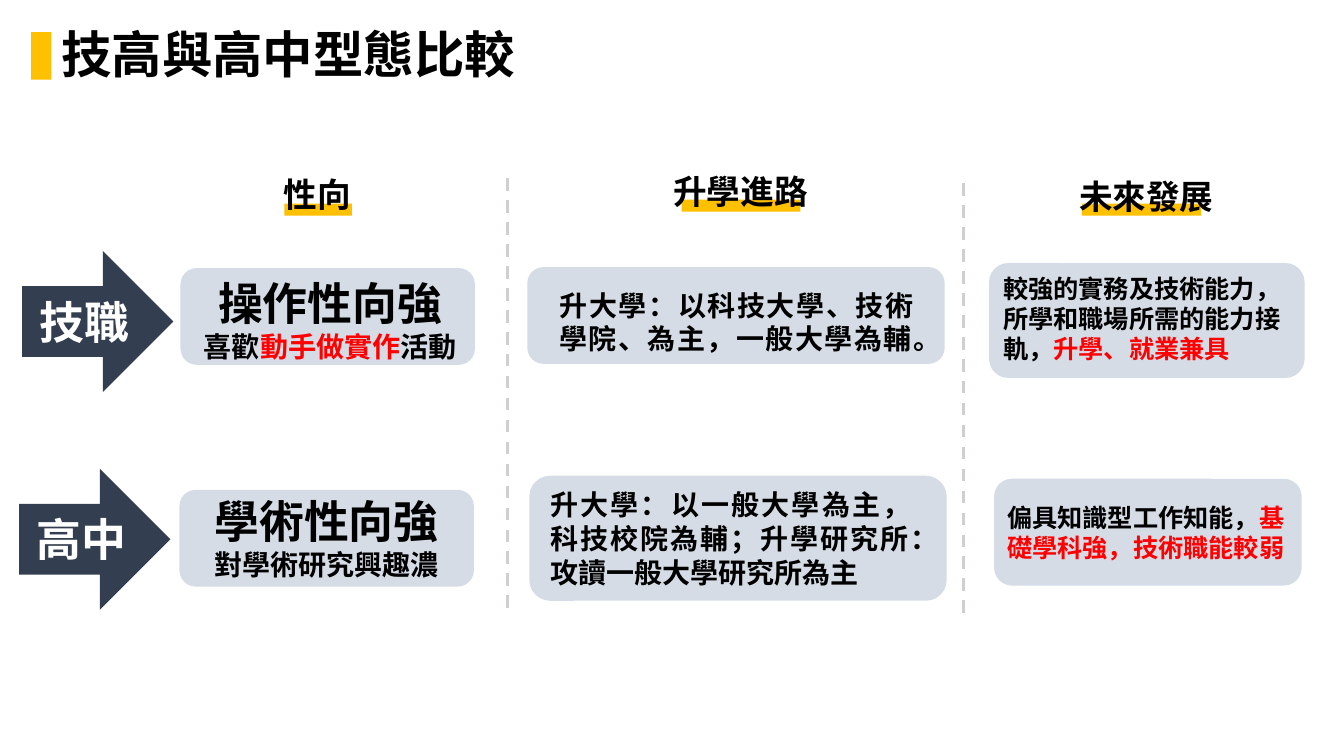
from pptx import Presentation
from pptx.dml.color import RGBColor as Rgb
from pptx.enum.dml import MSO_LINE as Dash
from pptx.enum.shapes import MSO_CONNECTOR as Conn, MSO_SHAPE as Kind
from pptx.enum.text import PP_ALIGN as Align
from pptx.oxml.ns import qn
from pptx.util import Inches, Pt
from lxml.etree import SubElement as Sub

FONT = "Noto Sans CJK SC"
HUES = {
    "gold": "FFC000", "navy": "333F50", "pale": "D6DCE5", "rule": "D0CECE",
    "black": "000000", "red": "FF0000", "white": "FFFFFF",
}


def hue(name):
    return Rgb.from_string(HUES[name])


def add_box(slide, kind, spot, fill):
    box = slide.shapes.add_shape(kind, *map(Inches, spot))
    box.shadow.inherit = False
    box.fill.solid()
    box.fill.fore_color.rgb = hue(fill)
    box.line.fill.background()


def add_text(slide, spot, *lines, size=20, color="black", align=Align.CENTER,
             space=None, top=0.05):
    frame = slide.shapes.add_textbox(*map(Inches, spot)).text_frame
    frame.word_wrap = True
    frame.margin_top = Inches(top)
    for i, line in enumerate(lines):
        para = frame.add_paragraph() if i else frame.paragraphs[0]
        para.alignment = align
        if space:
            para.line_spacing = space
        for part in [line] if isinstance(line, str) else line:
            words, look = (part, {}) if isinstance(part, str) else part
            run = para.add_run()
            run.text = words
            font = run.font
            font.name = FONT
            font.bold = True
            font.size = Pt(look.get("size", size))
            font.color.rgb = hue(look.get("color", color))
            Sub(run._r.get_or_add_rPr(), qn("a:ea"), typeface=FONT)


def add_rule(slide, x, top, tall=4.33):
    ends = map(Inches, (x, top, x, top + tall))
    rule = slide.shapes.add_connector(Conn.STRAIGHT, *ends)
    rule.line.color.rgb = hue("rule")
    rule.line.width = Pt(2.25)
    rule.line.dash_style = Dash.DASH
    Sub(rule._element.spPr, qn("a:effectLst"))


def add_title(slide, words):
    add_box(slide, Kind.RECTANGLE, (0.31, 0.32, 0.2, 0.47), "gold")
    add_text(slide, (0.51, 0.3, 6.82, 0.49), words, size=36,
             align=Align.LEFT, space=0.9, top=0)


def add_head(slide, words, bar, spot):
    add_box(slide, Kind.RECTANGLE, (*bar, 0.12), "gold")
    add_text(slide, (*spot, 0.5), words, size=24)


def add_arrow(slide, words, x, y):
    add_box(slide, Kind.RIGHT_ARROW, (x, y, 1.5, 1.4), "navy")
    add_text(slide, (x + 0.07, y + 0.38, 1.09, 0.64), words, size=32, color="white")


def add_card(slide, card, spot, *lines, **look):
    add_box(slide, Kind.ROUNDED_RECTANGLE, card, "pale")
    add_text(slide, spot, *lines, **look)


def red(words):
    return words, {"color": "red"}


def big(words):
    return [(words, {"size": 32})]


def main():
    deck = Presentation()
    deck.slide_width, deck.slide_height = Inches(13.33), Inches(7.5)
    slide = deck.slides.add_slide(deck.slide_layouts[6])

    add_title(slide, "技高與高中型態比較")
    add_head(slide, "性向", (2.82, 2.02, 0.67), (2.58, 1.68, 1.14))
    add_head(slide, "升學進路", (6.76, 1.98, 1.18), (6.54, 1.65, 1.61))
    add_head(slide, "未來發展", (10.73, 2.02, 1.18), (10.59, 1.7, 1.56))
    add_rule(slide, 5.03, 1.77)
    add_rule(slide, 9.56, 1.82)
    add_arrow(slide, "技職", 0.22, 2.49)
    add_arrow(slide, "高中", 0.19, 4.65)

    add_card(slide, (1.79, 2.66, 2.92, 0.96), (1.92, 2.69, 2.71, 0.98),
             big("操作性向強"), ["喜歡", red("動手做實作"), "活動"])
    add_card(slide, (1.78, 4.86, 2.92, 0.96), (1.97, 4.85, 2.54, 0.98),
             big("學術性向強"), "對學術研究興趣濃")

    add_card(slide, (5.23, 2.65, 4.14, 0.96), (5.45, 2.81, 3.71, 0.77),
             "升大學：以科技大學、技術學院、為主，一般大學為輔。",
             align=Align.JUSTIFY)
    add_card(slide, (5.25, 4.72, 4.14, 1.24), (5.36, 4.79, 3.77, 1.11),
             "升大學：以一般大學為主，科技校院為輔；升學研究所：攻讀一般大學研究所為主",
             align=Align.JUSTIFY)

    add_card(slide, (9.81, 2.61, 3.13, 1.14), (9.85, 2.66, 3.16, 1.01),
             ["較強的實務及技術能力，所學和職場所需的能力接軌，", red("升學、就業兼具")],
             size=18, align=Align.LEFT)
    add_card(slide, (9.86, 4.75, 3.05, 1.06), (9.89, 4.93, 3.05, 0.71),
             ["偏具知識型工作知能，", red("基礎學科強，技術職能較弱")],
             size=18, align=Align.LEFT)
    deck.save("out.pptx")


if __name__ == "__main__":
    main()
